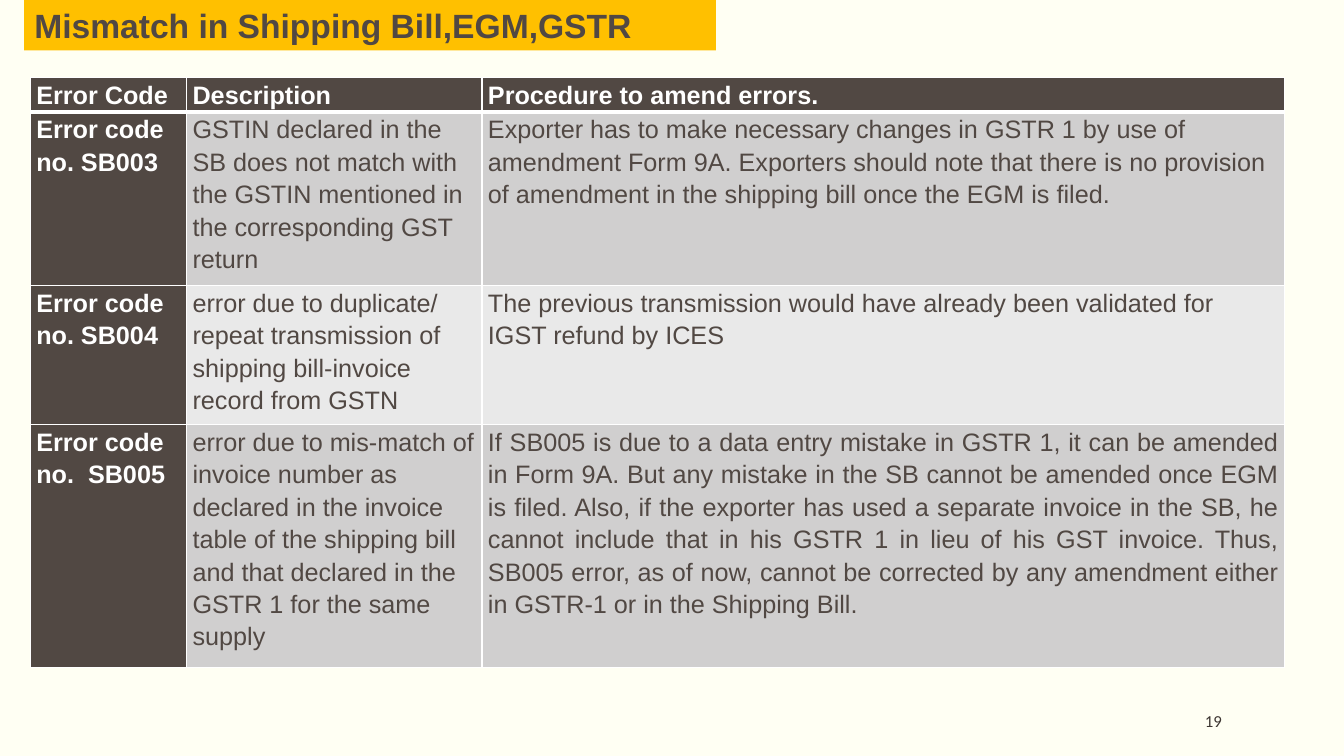
from lxml import etree
from pptx import Presentation
from pptx.dml.color import RGBColor
from pptx.enum.text import MSO_ANCHOR, MSO_AUTO_SIZE, PP_ALIGN
from pptx.oxml.ns import qn
from pptx.util import Inches, Pt

LEFT, RIGHT, JUSTIFY = PP_ALIGN.LEFT, PP_ALIGN.RIGHT, PP_ALIGN.JUSTIFY
TOP, MIDDLE = MSO_ANCHOR.TOP, MSO_ANCHOR.MIDDLE
NO_FIT = MSO_AUTO_SIZE.NONE
TITLE_ONLY = 5

COLORS = {
    "background": "FFFFF3",
    "banner": "FFC000",
    "dark": "514843",
    "band": "D0CFCF",
    "light_band": "E9E9E9",
    "white": "FFFFFF",
    "number": "3D3632",
}

COL_WIDTHS = [1.55, 2.93, 7.96]
ROW_HEIGHTS = [0.34, 1.72, 1.38, 2.41]
ERROR_ROWS = [
    ["Error Code", "Description", "Procedure to amend errors."],
    ["Error code no. SB003",
     "GSTIN declared in the SB does not match with the GSTIN mentioned in "
     "the corresponding GST return",
     "Exporter has to make necessary changes in GSTR 1 by use of amendment "
     "Form 9A. Exporters should note that there is no provision of amendment "
     "in the shipping bill once the EGM is filed."],
    ["Error code no. SB004",
     "error due to duplicate/ repeat transmission of shipping bill-invoice "
     "record from GSTN",
     "The previous transmission would have already been validated for IGST "
     "refund by ICES"],
    ["Error code no.  SB005",
     "error due to mis-match of invoice number as declared in the invoice "
     "table of the shipping bill and that declared in the GSTR 1 for the "
     "same supply",
     "If SB005 is due to a data entry mistake in GSTR 1, it can be amended in "
     "Form 9A. But any mistake in the SB cannot be amended once EGM is filed. "
     "Also, if the exporter has used a separate invoice in the SB, he cannot "
     "include that in his GSTR 1 in lieu of his GST invoice. Thus, SB005 "
     "error, as of now, cannot be corrected by any amendment either in GSTR-1 "
     "or in the Shipping Bill."],
]


def rgb(name):
    return RGBColor.from_string(COLORS[name])


def fill_solid(obj, color):
    obj.fill.solid()
    obj.fill.fore_color.rgb = rgb(color)


def write_text(tf, text, size=18, color="dark", bold=False, font="Arial",
               align=LEFT, line_spacing=None, space_after=None):
    p = tf.paragraphs[0]
    p.alignment = align
    if line_spacing is not None:
        p.line_spacing = line_spacing
    if space_after is not None:
        p.space_after = Pt(space_after)
    r = p.add_run()
    r.text = text
    r.font.name = font
    r.font.size = Pt(size)
    r.font.bold = bold
    r.font.color.rgb = rgb(color)


def set_borders(cell, color, **widths):
    """Draw cell edges; widths maps L, R, T and B to points."""
    tc_pr = cell._tc.get_or_add_tcPr()
    for i, side in enumerate("LRTB"):
        ln = etree.Element(qn(f"a:ln{side}"), w=str(Pt(widths[side])))
        solid = etree.SubElement(ln, qn("a:solidFill"))
        etree.SubElement(solid, qn("a:srgbClr"), val=COLORS[color])
        tc_pr.insert(i, ln)


class SlideBuilder:
    def __init__(self, prs):
        self.s = prs.slides.add_slide(prs.slide_layouts[TITLE_ONLY])
        fill_solid(self.s.background, "background")

    def title(self, text, x, y, w, h):
        sp = self.s.shapes.title
        sp.left, sp.top, sp.width, sp.height = map(Inches, (x, y, w, h))
        fill_solid(sp, "banner")
        tf = sp.text_frame
        tf.word_wrap = True
        tf.auto_size = NO_FIT
        tf.vertical_anchor = MIDDLE
        write_text(tf, text, size=24, bold=True)

    def table(self, rows, x, y, col_widths, row_heights):
        frame = self.s.shapes.add_table(
            len(rows), len(col_widths), Inches(x), Inches(y),
            Inches(sum(col_widths)), Inches(sum(row_heights)))
        table = frame.table
        table.first_col = True
        for column, width in zip(table.columns, col_widths):
            column.width = Inches(width)
        for row, height in zip(table.rows, row_heights):
            row.height = Inches(height)
        for i, texts in enumerate(rows):
            for j, text in enumerate(texts):
                self.cell(table.cell(i, j), text, i, j,
                          JUSTIFY if i == 3 and j == 2 else LEFT)

    def cell(self, cell, text, i, j, align):
        heading = i == 0 or j == 0
        band = "band" if i % 2 else "light_band"
        fill_solid(cell, "dark" if heading else band)
        cell.margin_left = cell.margin_right = Inches(0.06)
        cell.margin_top = cell.margin_bottom = 0
        cell.vertical_anchor = TOP
        set_borders(cell, "white", L=1, R=1,
                    T=3 if i == 1 else 1, B=3 if i == 0 else 1)
        write_text(cell.text_frame, text, bold=heading, align=align,
                   color="white" if heading else "dark",
                   line_spacing=1.15, space_after=10)

    def page_number(self, text, x, y, w, h):
        sp = self.s.shapes.add_textbox(*map(Inches, (x, y, w, h)))
        tf = sp.text_frame
        tf.word_wrap = True
        tf.margin_left = tf.margin_right = 0
        tf.vertical_anchor = MIDDLE
        write_text(tf, text, size=12, color="number", font="Calibri",
                   align=RIGHT)


def main():
    prs = Presentation()
    prs.slide_width, prs.slide_height = Inches(13.33), Inches(7.5)
    slide = SlideBuilder(prs)
    slide.title("Mismatch in Shipping Bill,EGM,GSTR", 0.24, 0, 6.86, 0.5)
    slide.table(ERROR_ROWS, 0.3, 0.77, COL_WIDTHS, ROW_HEIGHTS)
    slide.page_number("19", 10.12, 6.95, 2, 0.4)
    prs.save("out.pptx")


if __name__ == "__main__":
    main()
